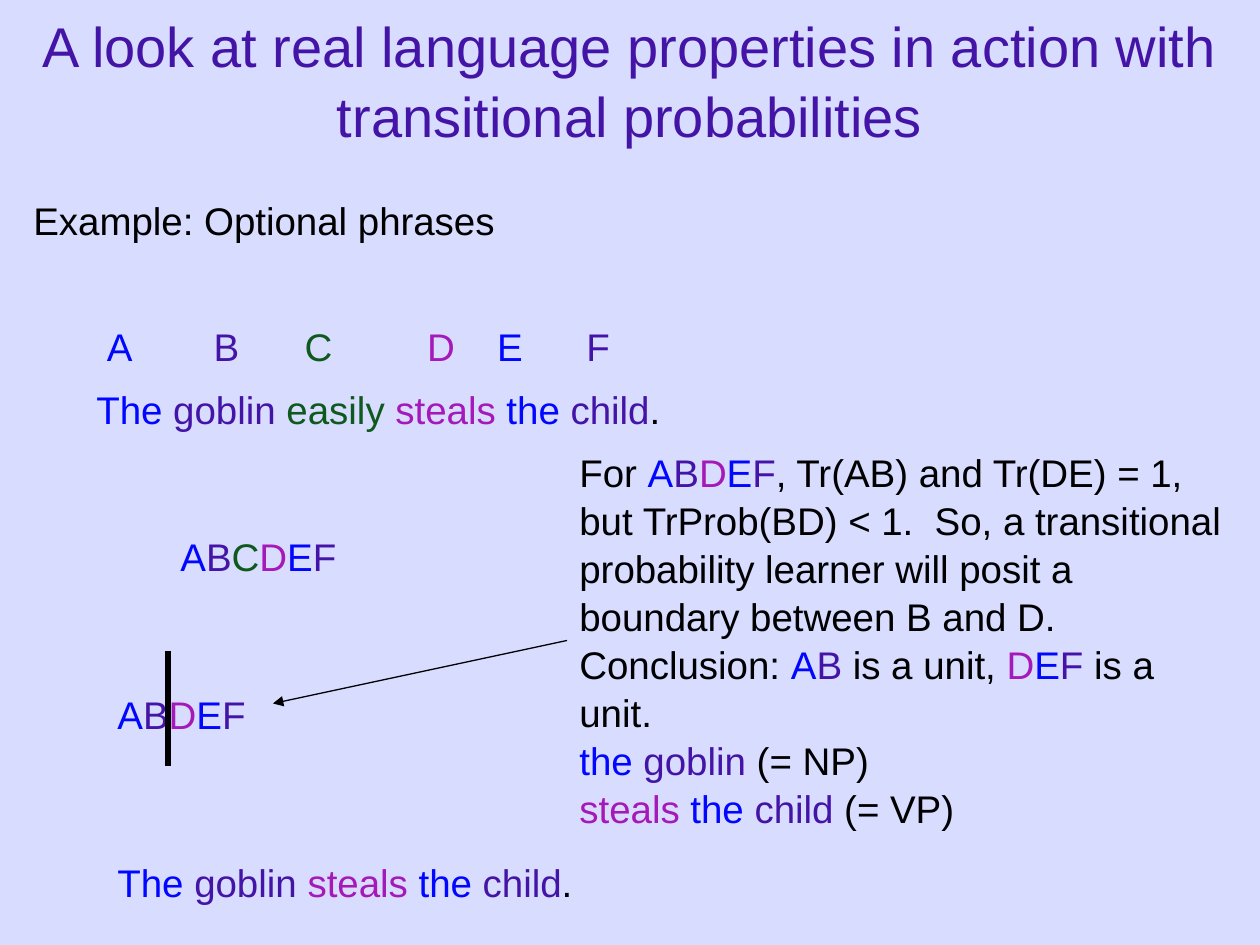
import pptx
import pptx.dml.color
import pptx.enum.shapes
import pptx.enum.text
import pptx.oxml
import pptx.oxml.ns
import pptx.util

Pt = pptx.util.Pt
RGBColor = pptx.dml.color.RGBColor
PP_ALIGN = pptx.enum.text.PP_ALIGN
MSO_ANCHOR = pptx.enum.text.MSO_ANCHOR

BACKGROUND = RGBColor(0xD8, 0xDC, 0xFF)
BLACK = RGBColor(0, 0, 0)
BLUE = RGBColor(0x00, 0x06, 0xFF)
PURPLE = RGBColor(0x44, 0x14, 0xA7)
GREEN = RGBColor(0x0F, 0x59, 0x1E)
MAGENTA = RGBColor(0xA5, 0x19, 0xB9)

LETTER_COLORS = {"A": BLUE, "B": PURPLE, "C": GREEN, "D": MAGENTA, "E": BLUE, "F": PURPLE}
WORDS = {"A": "The ", "B": "goblin ", "C": "easily ", "D": "steals ", "E": "the ", "F": "child"}
LINE_SPACING = 1.04


def letter_runs(letters):
    return [(letter, LETTER_COLORS[letter]) for letter in letters]


def sentence_runs(letters):
    return [(WORDS[letter], LETTER_COLORS[letter]) for letter in letters] + [(".", BLACK)]


def add_text(slide, box, paragraphs, size=22, wrap=False):
    shape = slide.shapes.add_textbox(*(Pt(value) for value in box))
    frame = shape.text_frame
    frame.word_wrap = wrap
    for index, runs in enumerate(paragraphs):
        paragraph = frame.add_paragraph() if index else frame.paragraphs[0]
        paragraph.line_spacing = LINE_SPACING
        for text, color in runs:
            run = paragraph.add_run()
            run.text = text
            run.font.name = "Arial"
            run.font.size = Pt(size)
            run.font.color.rgb = color
    return frame


def add_title(slide, box):
    title = "A look at real language properties in action with transitional probabilities"
    frame = add_text(slide, box, [[(title, PURPLE)]], size=32, wrap=True)
    frame.vertical_anchor = MSO_ANCHOR.MIDDLE
    frame.paragraphs[0].alignment = PP_ALIGN.CENTER


def add_letter_row(slide, box, stops):
    runs = [(("\t" if index else "") + letter, color)
            for index, (letter, color) in enumerate(letter_runs("ABCDEF"))]
    paragraph = add_text(slide, box, [runs], wrap=True).paragraphs[0]
    properties = paragraph._p.get_or_add_pPr()
    tabs = "".join(f'<a:tab pos="{Pt(stop)}" algn="l"/>' for stop in stops)
    properties.append(pptx.oxml.parse_xml(
        f'<a:tabLst {pptx.oxml.ns.nsdecls("a")}>{tabs}</a:tabLst>'))


def add_line(slide, start, end, width, arrow=False):
    connector = slide.shapes.add_connector(
        pptx.enum.shapes.MSO_CONNECTOR.STRAIGHT, *(Pt(value) for value in start + end))
    connector.line.color.rgb = BLACK
    connector.line.width = Pt(width)
    namespace = pptx.oxml.ns.nsdecls("a")
    if arrow:
        connector.line._get_or_add_ln().append(
            pptx.oxml.parse_xml(f'<a:tailEnd {namespace} type="triangle"/>'))
    connector._element.spPr.append(pptx.oxml.parse_xml(f"<a:effectLst {namespace}/>"))


def add_examples(slide, box):
    left, top, width, height = box
    add_text(slide, (left, top, 279, height), [[("Example: Optional phrases", BLACK)]])
    add_letter_row(slide, (left + 42, top + 72, 305, height), (61, 113, 183, 223, 274))
    add_text(slide, (left + 36, top + 108, 338, height), [sentence_runs("ABCDEF")])
    add_text(slide, (left + 84, top + 192, 104, height), [letter_runs("ABCDEF")])
    add_text(slide, (left + 48, top + 282, 88, height), [letter_runs("ABDEF")])
    add_line(slide, (left + 84, top + 264), (left + 84, top + 330), 3)
    add_text(slide, (left + 48, top + 378, 275, height), [sentence_runs("ABDEF")])


def add_conclusion(slide, box):
    left, top, width, height = box
    add_line(slide, (left, top + 114), (left - 168, top + 150), 0.75, arrow=True)
    add_text(slide, box, [
        [("For ", BLACK), *letter_runs("ABDEF"),
         (", Tr(AB) and Tr(DE) = 1, but TrProb(BD) < 1.  So, a transitional "
          "probability learner will posit a boundary between B and D.", BLACK)],
        [("Conclusion: ", BLACK), ("A", BLUE), ("B ", PURPLE), ("is a unit, ", BLACK),
         ("D", MAGENTA), ("E", BLUE), ("F ", PURPLE), ("is a unit.", BLACK)],
        [("the ", BLUE), ("goblin", PURPLE), (" (= NP)", BLACK)],
        [("steals ", MAGENTA), ("the ", BLUE), ("child", PURPLE), (" (= VP)", BLACK)],
    ], wrap=True)


def main():
    presentation = pptx.Presentation()
    presentation.slide_width = Pt(720)
    presentation.slide_height = Pt(540)
    slide = presentation.slides.add_slide(presentation.slide_layouts[6])
    slide.background.fill.solid()
    slide.background.fill.fore_color.rgb = BACKGROUND
    add_title(slide, (0, 0, 720, 90))
    add_examples(slide, (12, 108, 374, 34))
    add_conclusion(slide, (324, 252, 384, 218))
    presentation.save("out.pptx")


if __name__ == "__main__":
    main()
